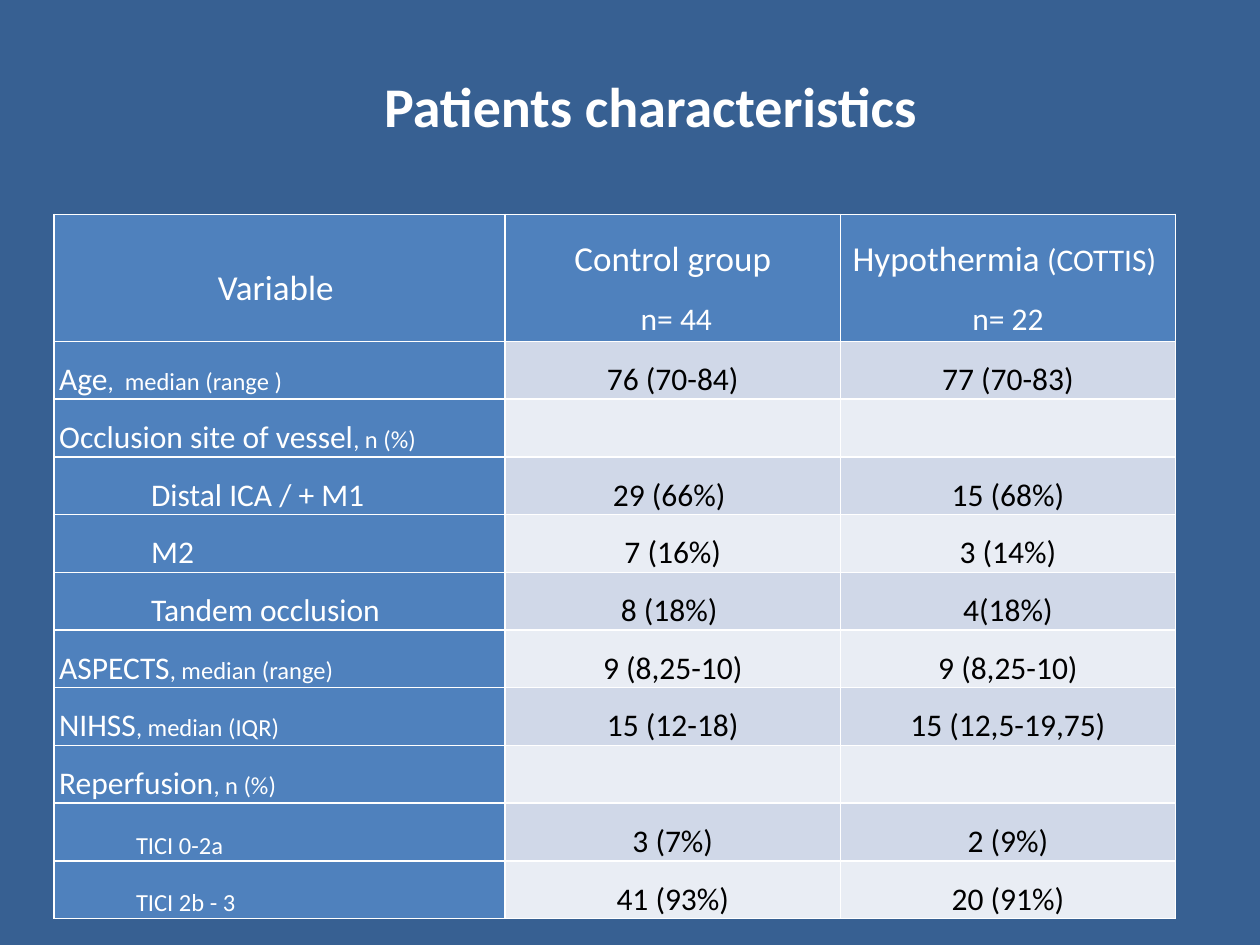
from lxml.etree import SubElement
from pptx import Presentation
from pptx.dml.color import RGBColor
from pptx.enum.text import MSO_ANCHOR as Anchor, PP_ALIGN as Align
from pptx.oxml.ns import qn
from pptx.util import Inches, Pt

WHITE, BLACK, BLUE = "FFFFFF", "000000", "4F81BD"
BANDS = ["D0D8E8", "E9EDF4"]
VESSEL_INDENT, TICI_INDENT = Inches(0.73), Inches(0.61)


def paint(fill, color):
    fill.solid()
    fill.fore_color.rgb = RGBColor.from_string(color)


def write(para, parts, color, bold=False):
    for text, size in parts:
        span = para.add_run()
        span.text = text
        span.font.name = "Calibri"
        span.font.size = Pt(size)
        span.font.bold = bold
        paint(span.font.fill, color)


header = [
    [[("Variable ", 20)]],
    [[("Control group", 20)], [(" n= 44", 18)]],
    [[("Hypothermia", 20), (" (COTTIS) ", 18)], [("n= 22", 18)]],
]
records = [
    ([("Age", 18), (",  median (range\u00a0)".replace("\u00a0", " "), 14)], 0, "76 (70-84)", "77 (70-83)"),
    ([("Occlusion site of vessel", 18), (", n (%)", 14)], 0, "", ""),
    ([("Distal ICA / + M1", 18)], VESSEL_INDENT, "29 (66%) ", "15 (68%)"),
    ([("M2", 18)], VESSEL_INDENT, "7 (16%)", "3 (14%)"),
    ([("Tandem occlusion", 18)], VESSEL_INDENT, "8 (18%) ", "4(18%)"),
    ([("ASPECTS", 18), (", median (range)", 14)], 0, "9 (8,25-10)", "9 (8,25-10)"),
    ([("NIHSS", 18), (", median (IQR)", 14)], 0, "15 (12-18)", "15 (12,5-19,75)"),
    ([("Reperfusion", 18), (", n (%)", 14)], 0, "", ""),
    ([("TICI 0-2a", 14)], TICI_INDENT, "3 (7%)", "2 (9%)"),
    ([("TICI 2b - 3", 14)], TICI_INDENT, "41 (93%)", "20 (91%)"),
]
rows = [[(paras, 0) for paras in header]]
for label, indent, control, cooled in records:
    values = [([[(value, 18)]] if value else [], 0) for value in (control, cooled)]
    rows.append([([label], indent)] + values)

deck = Presentation()
deck.slide_width, deck.slide_height = Inches(10), Inches(7.5)
across, down = deck.slide_width / 100, deck.slide_height / 100
page = deck.slides.add_slide(deck.slide_layouts[6])
paint(page.background.fill, "376092")

widths = [35.8, 26.6, 26.6]
heights = [13.47] + [5.33] * len(records)
frame = page.shapes.add_table(
    len(rows), len(widths), int(4.3 * across), int(22.67 * down),
    int(sum(widths) * across), int(sum(heights) * down))
table = frame.table
for column, width in zip(table.columns, widths):
    column.width = int(width * across)
for row, height in zip(table.rows, heights):
    row.height = int(height * down)

for r, row in enumerate(rows):
    for c, (paras, indent) in enumerate(row):
        cell = table.cell(r, c)
        properties = cell._tc.get_or_add_tcPr()
        for side in ("a:lnL", "a:lnR", "a:lnT", "a:lnB"):
            line = SubElement(properties, qn(side), w=str(Pt(1)))
            SubElement(SubElement(line, qn("a:solidFill")), qn("a:srgbClr"), val=WHITE)
        is_heading = r == 0 or c == 0
        paint(cell.fill, BLUE if is_heading else BANDS[(r - 1) % 2])
        cell.vertical_anchor = Anchor.BOTTOM if r else Anchor.MIDDLE
        cell.margin_left = cell.margin_right = Inches(0.04)
        cell.margin_top = cell.margin_bottom = 0
        for p, parts in enumerate(paras):
            text_frame = cell.text_frame
            para = text_frame.add_paragraph() if p else text_frame.paragraphs[0]
            para.alignment = Align.LEFT if r and c == 0 else Align.CENTER
            para.line_spacing = 1.5
            if indent:
                para._p.get_or_add_pPr().set("marL", str(indent))
            write(para, parts, WHITE if is_heading else BLACK)

title = page.shapes.add_textbox(
    int(29.5 * across), int(6.93 * down), int(57.5 * across), int(8.53 * down))
title.text_frame.word_wrap = True
write(title.text_frame.paragraphs[0], [("Patients characteristics", 32)], WHITE, True)

deck.save("out.pptx")
